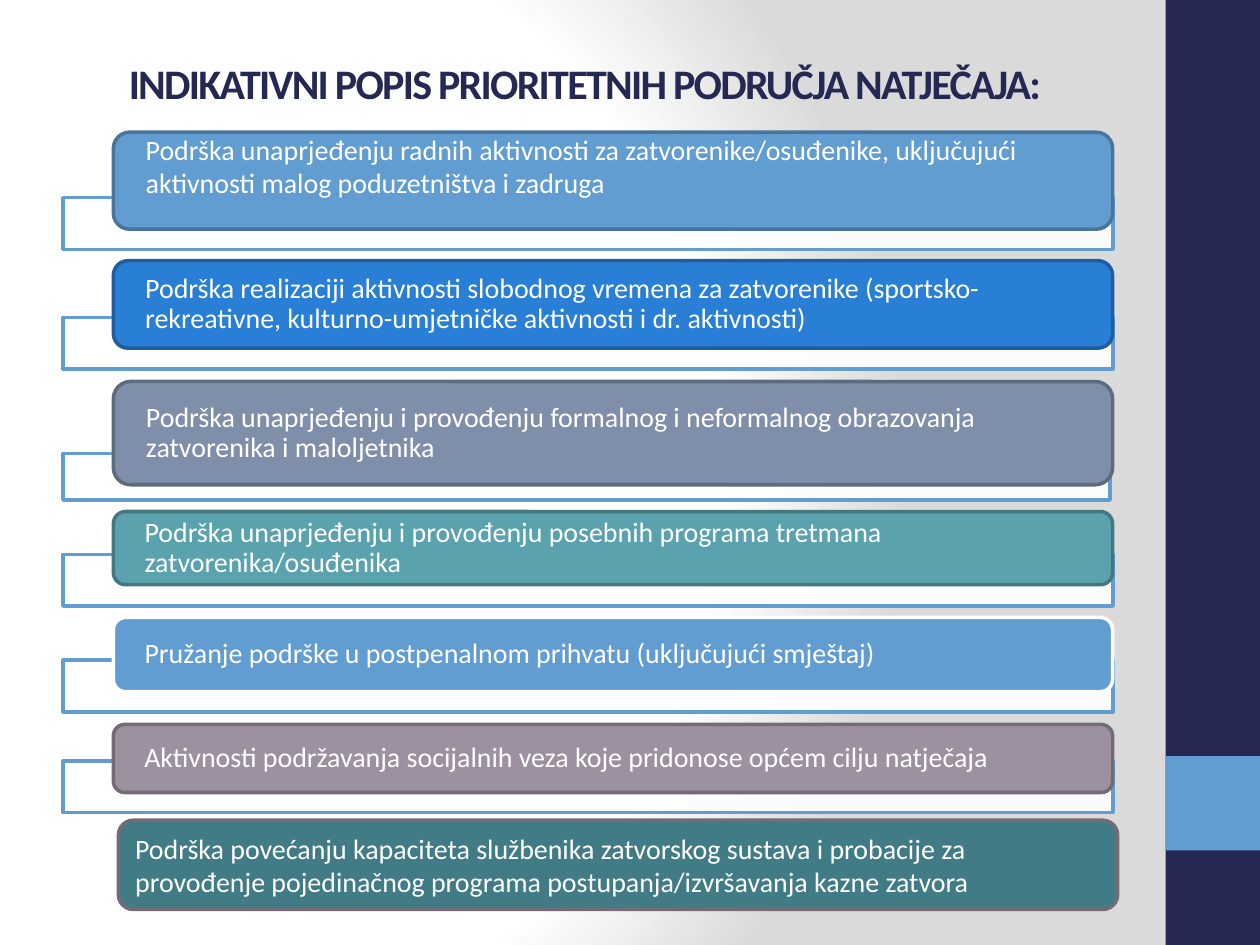
from lxml import etree
from pptx import Presentation
from pptx.dml.color import RGBColor
from pptx.enum.shapes import MSO_SHAPE as Shape
from pptx.enum.text import MSO_ANCHOR as Anchor, PP_ALIGN as Align
from pptx.oxml import parse_xml
from pptx.oxml.ns import nsdecls, qn
from pptx.util import Pt

NAVY = RGBColor(0x24, 0x28, 0x52)
SKY = RGBColor(0x62, 0x9D, 0xD1)
SKY_DARK = RGBColor(0x49, 0x74, 0x9B)
BLUE = RGBColor(0x29, 0x7F, 0xD5)
BLUE_DARK = RGBColor(0x1E, 0x5E, 0x9E)
SLATE = RGBColor(0x7F, 0x8F, 0xA9)
SLATE_DARK = RGBColor(0x5E, 0x6A, 0x7D)
TEAL = RGBColor(0x5A, 0xA2, 0xAE)
TEAL_DARK = RGBColor(0x43, 0x78, 0x81)
MAUVE = RGBColor(0x9D, 0x90, 0xA0)
MAUVE_DARK = RGBColor(0x74, 0x6B, 0x76)
PINE = RGBColor(0x41, 0x7B, 0x85)
WHITE = RGBColor(0xFF, 0xFF, 0xFF)

presentation = Presentation()
presentation.slide_width = Pt(720)
presentation.slide_height = Pt(540)
slide = presentation.slides.add_slide(presentation.slide_layouts[6])


def add_block(kind, left, top, width, height, fill, line=None):
    shape = slide.shapes.add_shape(kind, Pt(left), Pt(top), Pt(width), Pt(height))
    shape.shadow.inherit = False
    shape.fill.solid()
    shape.fill.fore_color.rgb = fill
    if line is None:
        shape.line.fill.background()
    else:
        shape.line.color.rgb = line
        shape.line.width = Pt(2)
    return shape


def write_text(shape, text, size, color, align):
    frame = shape.text_frame
    frame.word_wrap = True
    frame.vertical_anchor = Anchor.MIDDLE
    frame.text = text
    paragraph = frame.paragraphs[0]
    paragraph.alignment = align
    font = paragraph.runs[0].font
    font.name = "Calibri"
    font.size = Pt(size)
    font.color.rgb = color
    return paragraph


# Background: radial gradient from white to grey
slide.element.cSld.insert(0, parse_xml(
    f'<p:bg {nsdecls("p", "a")}><p:bgPr><a:gradFill rotWithShape="1"><a:gsLst>'
    '<a:gs pos="0"><a:srgbClr val="FFFFFF"/></a:gs>'
    '<a:gs pos="75000"><a:srgbClr val="FFFFFF"/></a:gs>'
    '<a:gs pos="100000"><a:srgbClr val="DADADA"/></a:gs></a:gsLst>'
    '<a:path path="circle"><a:fillToRect l="20000" t="50000" r="100000" b="50000"/>'
    '</a:path></a:gradFill><a:effectLst/></p:bgPr></p:bg>'))

# Side band with accent square
add_block(Shape.RECTANGLE, 666, 0, 54, 540, NAVY)
add_block(Shape.RECTANGLE, 666, 432, 54, 54, SKY)

# Title
title = slide.shapes.add_textbox(Pt(28.8), Pt(2.2), Pt(610.6), Pt(90))
heading = write_text(title, "INDIKATIVNI POPIS PRIORITETNIH PODRUČJA NATJEČAJA:",
                     24, NAVY, Align.CENTER)
heading.runs[0].font.bold = True
heading.runs[0].font._element.set("spc", "-100")

# Priority areas: bar top, bar height, frame top, frame width, frame height,
# fill, line, line spacing, bottom inset, text
priorities = [
    (75.6, 55.4, 113, 600, 29.5, SKY, SKY_DARK, 1.0, 17,
     "Podrška unaprjeđenju radnih aktivnosti za zatvorenike/osuđenike, "
     "uključujući aktivnosti malog poduzetništva i zadruga"),
    (149, 50, 181.5, 600, 29.5, BLUE, BLUE_DARK, 0.9, 0,
     "Podrška realizaciji aktivnosti slobodnog vremena za zatvorenike "
     "(sportsko-rekreativne, kulturno-umjetničke aktivnosti i dr. aktivnosti)"),
    (218, 59, 259.2, 598.3, 26.6, SLATE, SLATE_DARK, 0.9, 0,
     "Podrška unaprjeđenju i provođenju formalnog i neformalnog obrazovanja "
     "zatvorenika i maloljetnika"),
    (292.3, 41.8, 316.8, 600, 29.5, TEAL, TEAL_DARK, 0.9, 0,
     "Podrška unaprjeđenju i provođenju posebnih programa tretmana "
     "zatvorenika/osuđenika"),
    (352.8, 42.5, 377.3, 600, 29.5, SKY, WHITE, 0.9, 0,
     "Pružanje podrške u postpenalnom prihvatu (uključujući smještaj)"),
    (414, 38.9, 434.9, 600, 29.5, MAUVE, MAUVE_DARK, 0.9, 0,
     "Aktivnosti podržavanja socijalnih veza koje pridonose općem cilju natječaja"),
]
for (top, height, frame_top, frame_width, frame_height,
     fill, line, spacing, bottom_inset, text) in priorities:
    frame = add_block(Shape.RECTANGLE, 36, frame_top, frame_width, frame_height, WHITE, SKY)
    white = frame.fill._xPr.find(qn("a:solidFill"))[0]
    etree.SubElement(white, qn("a:alpha"), val="90000")

    bar = add_block(Shape.ROUNDED_RECTANGLE, 64.8, top, 571, height, fill, line)
    paragraph = write_text(bar, text, 16, WHITE, Align.LEFT)
    paragraph.line_spacing = spacing
    text_frame = bar.text_frame
    text_frame.margin_left = text_frame.margin_right = Pt(15.8)
    text_frame.margin_top = Pt(0)
    text_frame.margin_bottom = Pt(bottom_inset)

# Closing bar without a frame
closing = add_block(Shape.ROUNDED_RECTANGLE, 67.7, 468.7, 571, 51, PINE, MAUVE_DARK)
write_text(closing, "Podrška povećanju kapaciteta službenika zatvorskog sustava i probacije "
           "za provođenje pojedinačnog programa postupanja/izvršavanja kazne zatvora",
           16, WHITE, Align.LEFT)

presentation.save("out.pptx")
